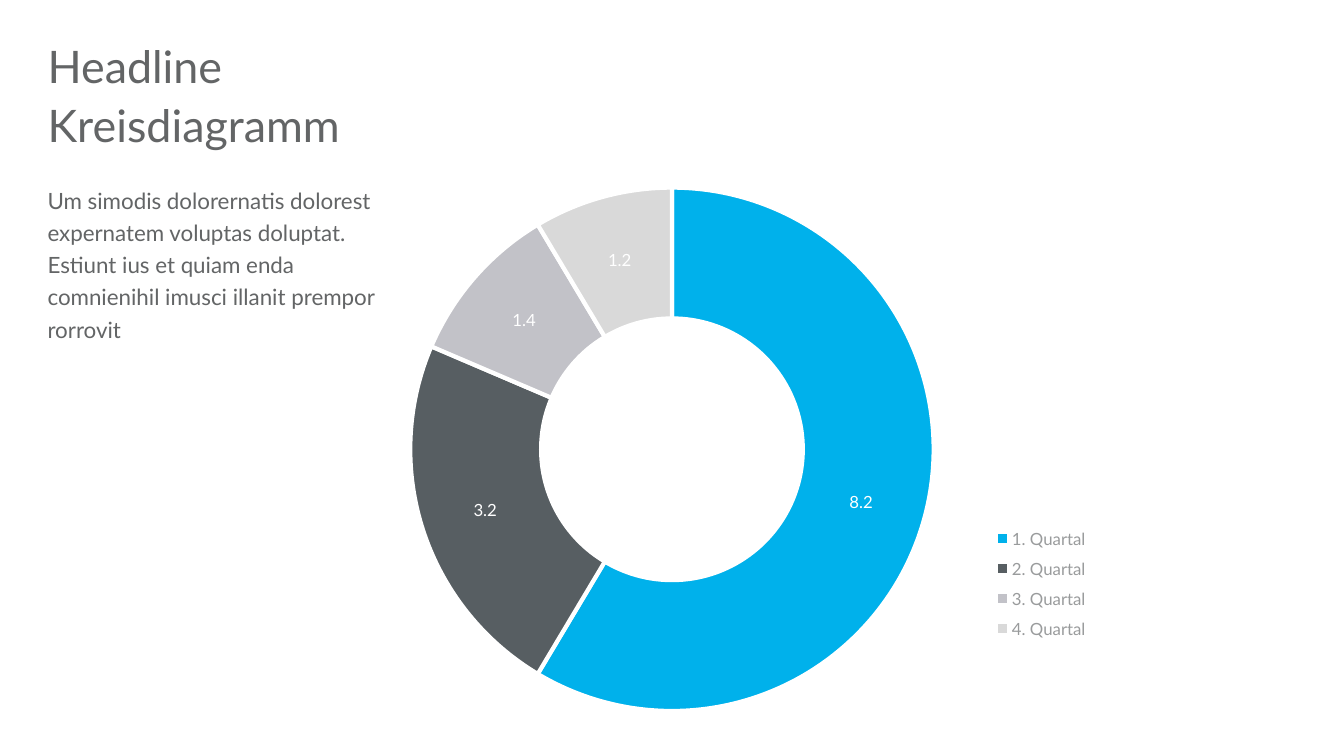
from lxml import etree
from pptx import Presentation
from pptx import util as u
from pptx.chart.data import CategoryChartData
from pptx.dml.color import RGBColor
from pptx.enum import chart as charts, text
from pptx.oxml import parse_xml
from pptx.oxml.ns import nsdecls, qn

FONT = "Lato"
GREY = RGBColor(0x63, 0x65, 0x66)
LEGEND_GREY = RGBColor(0x99, 0x9B, 0x9C)
WHITE = RGBColor(0xFF, 0xFF, 0xFF)
QUARTERS = [
    ("1. Quartal", 8.2, RGBColor(0x00, 0xB1, 0xEB)),
    ("2. Quartal", 3.2, RGBColor(0x57, 0x5E, 0x62)),
    ("3. Quartal", 1.4, RGBColor(0xC2, 0xC2, 0xC8)),
    ("4. Quartal", 1.2, RGBColor(0xD9, 0xD9, 0xD9)),
]
BODY = ("Um simodis dolorernatis dolorest expernatem voluptas doluptat. "
        "Estiunt ius et quiam enda comnienihil imusci illanit prempor rorrovit")


def set_font(font, size, color):
    font.name, font.size = FONT, u.Pt(size)
    font.color.rgb = color


def add_text(page, box, words, size, **spacing):
    shape = page.shapes.add_textbox(*map(u.Pt, box))
    frame = shape.text_frame
    settings = {"word_wrap": True, "vertical_anchor": text.MSO_ANCHOR.TOP,
                "margin_left": 0, "margin_top": 0, "margin_right": 0, "margin_bottom": 0}
    for name, value in settings.items():
        setattr(frame, name, value)
    para = frame.paragraphs[0]
    for name, value in spacing.items():
        setattr(para, name, value)
    span = para.add_run()
    span.text = words
    set_font(span.font, size, GREY)


def add_heading(page, left, top, width):
    line_height, pitch = 36.7, 38.2
    add_text(page, (left, top, width, line_height), "Headline", 32, line_spacing=0.9)
    add_text(page, (left, top + pitch, width, line_height), "Kreisdiagramm", 32)


def set_layout(parent, left, top, width, height, inner=False):
    """Give a chart part a manual layout in fractions of the chart area."""
    for old in parent.findall(qn("c:layout")):
        parent.remove(old)
    layout = parse_xml(f"<c:layout {nsdecls('c')}><c:manualLayout/></c:layout>")
    values = {"xMode": "edge", "yMode": "edge", "x": left, "y": top, "w": width, "h": height}
    if inner:
        values = {"layoutTarget": "inner", **values}
    for name, value in values.items():
        etree.SubElement(layout[0], qn(f"c:{name}")).set("val", str(value))
    position = parent.find(qn("c:legendPos"))
    if position is None:
        parent.insert(0, layout)
    else:
        position.addnext(layout)


def add_quarter_ring(page, box):
    data = CategoryChartData(number_format="General")
    data.categories = [name for name, _, _ in QUARTERS]
    data.add_series("Series 1", [value for _, value, _ in QUARTERS])
    chart = page.shapes.add_chart(
        charts.XL_CHART_TYPE.DOUGHNUT, *map(u.Pt, box), data).chart
    chart.has_title = False
    set_font(chart.font, 10, GREY)

    chart.has_legend = True
    legend = chart.legend
    legend.position = charts.XL_LEGEND_POSITION.RIGHT
    legend.include_in_layout = False
    set_font(legend.font, 12, LEGEND_GREY)

    plot = chart.plots[0]
    plot.vary_by_categories = True
    series = plot.series[0]
    for index, (_, _, color) in enumerate(QUARTERS):
        slice_format = series.points[index].format
        slice_format.fill.solid()
        slice_format.fill.fore_color.rgb = color
        slice_format.line.color.rgb = WHITE
        slice_format.line.width = u.Pt(3)
    labels = series.data_labels
    labels.show_value = True
    labels.show_percentage = False
    set_font(labels.font, 12, WHITE)

    area = chart.element.find(qn("c:chart"))
    ring = area.find(qn("c:plotArea"))
    ring.find(qn("c:doughnutChart")).find(qn("c:holeSize")).set("val", "62")
    set_layout(ring, 0.145, 0.09, 0.631, 0.885, inner=True)
    set_layout(area.find(qn("c:legend")), 0.83, 0.65, 0.13, 0.22)


def main():
    deck = Presentation()
    deck.slide_width, deck.slide_height = u.Pt(960), u.Pt(540)
    page = deck.slides.add_slide(deck.slide_layouts[6])
    margin = 34
    add_quarter_ring(page, (200, 96, 608, 422.5))
    add_heading(page, margin, 31.7, 892)
    add_text(page, (margin, 129.6, 239, 216), BODY, 16,
             line_spacing=1.2, space_after=u.Pt(10))
    deck.save("out.pptx")


if __name__ == "__main__":
    main()
